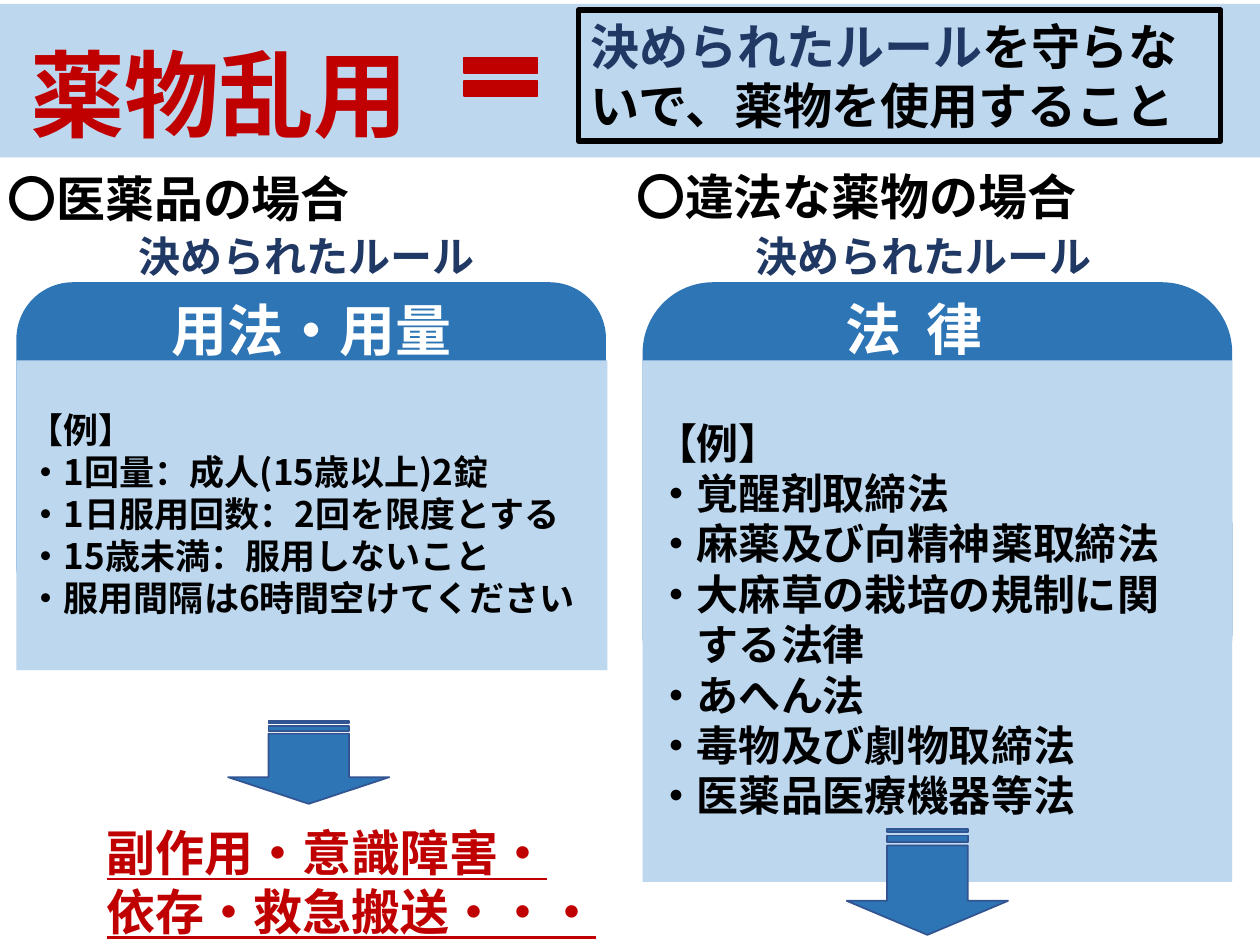
from lxml.etree import SubElement
from pptx import Presentation
from pptx.dml.color import RGBColor
from pptx.enum.shapes import MSO_SHAPE
from pptx.enum.text import MSO_ANCHOR, MSO_AUTO_SIZE, PP_ALIGN
from pptx.oxml.ns import qn
from pptx.util import Pt

PX = 9144  # 100 px to the inch
FONT = "Noto Sans CJK JP"
HEX = {"black": "000000", "white": "FFFFFF", "red": "C00000", "navy": "203864",
       "blue": "2E75B6", "pale": "BDD7EE", "edge": "325491"}

TITLE = "薬物乱用"
RULE = "決められたルール"
MEANING = [(RULE, "navy"), ("を守らないで、薬物を使用すること", "black")]
HARM = ["副作用・意識障害・", "依存・救急搬送・・・"]

# Boxes are left, top, width, height in px
COLUMNS = [
    {"case": "〇医薬品の場合", "case_at": (-4, 129, 392, 57),
     "rule_at": (100, 178, 290, 50),
     "head": "用法・用量", "head_at": (126, 230, 243, 64), "gap": 0,
     "cap_at": (13, 224, 468, 270), "card_at": (13, 286, 469, 246),
     "size": 20, "inset": 38, "arrow_at": (212, 541, 66, 128),
     "lines": ["【例】", "・1回量：成人(15歳以上)2錠", "・1日服用回数：2回を限度とする",
               "・15歳未満：服用しないこと", "・服用間隔は6時間空けてください"]},
    {"case": "〇違法な薬物の場合", "case_at": (495, 127, 392, 57),
     "rule_at": (590, 178, 290, 50),
     "head": "法 律", "head_at": (661, 229, 149, 64), "gap": 350,
     "cap_at": (510, 224, 468, 336), "card_at": (510, 286, 468, 414),
     "size": 24, "inset": 45, "arrow_at": (694, 636, 84, 128),
     "lines": ["【例】", "・覚醒剤取締法", "・麻薬及び向精神薬取締法",
               "・大麻草の栽培の規制に関", "　する法律", "・あへん法",
               "・毒物及び劇物取締法", "・医薬品医療機器等法"]},
]


def rgb(name):
    return RGBColor.from_string(HEX[name])


def px(box):
    return [n * PX for n in box]


def style(run, size, color):
    font = run.font
    font.size, font.bold, font.name = Pt(size), True, FONT
    font.color.rgb = rgb(color)
    SubElement(run._r.get_or_add_rPr(), qn("a:ea")).set("typeface", FONT)


def write(shape, lines, size, color):
    """Set one left-aligned paragraph per line and return the runs."""
    frame = shape.text_frame
    frame.word_wrap = True
    frame.vertical_anchor = MSO_ANCHOR.TOP
    frame.text = "\n".join(lines)
    runs = []
    for para in frame.paragraphs:
        para.alignment = PP_ALIGN.LEFT
        runs += para.runs
    for run in runs:
        style(run, size, color)
    return runs


def label(box, lines, size, color):
    return write(slide.shapes.add_textbox(*px(box)), lines, size, color)


def draw(kind, box, fill=None, line=None, width=1):
    shape = slide.shapes.add_shape(kind, *px(box))
    shape.shadow.inherit = False
    if fill:
        shape.fill.solid()
        shape.fill.fore_color.rgb = rgb(fill)
    else:
        shape.fill.background()
    if line:
        shape.line.color.rgb = rgb(line)
        shape.line.width = Pt(width)
    else:
        shape.line.fill.background()
    return shape


deck = Presentation()
deck.slide_width, deck.slide_height = px((1000, 750))
slide = deck.slides.add_slide(deck.slide_layouts[5])

# Title band
title = slide.shapes.title
title.left, title.top, title.width, title.height = px((0, 3, 1000, 122))
title.fill.solid()
title.fill.fore_color.rgb = rgb("pale")
write(title, [TITLE], 54, "red")
frame = title.text_frame
frame.auto_size = MSO_AUTO_SIZE.NONE
frame.vertical_anchor = MSO_ANCHOR.BOTTOM
frame.margin_left = 24 * PX
frame.paragraphs[0].line_spacing = 0.9

equal = draw(MSO_SHAPE.MATH_EQUAL, (358, 35, 79, 52), "red", "red")
equal.adjustments[0], equal.adjustments[1] = 0.235, 0.118

meaning = draw(MSO_SHAPE.RECTANGLE, (459, 8, 510, 104), line="black", width=3)
meaning.text_frame.word_wrap = True
para = meaning.text_frame.paragraphs[0]
para.alignment = PP_ALIGN.LEFT
for text, color in MEANING:
    run = para.add_run()
    run.text = text
    style(run, 28, color)

# Two columns
for col in COLUMNS:
    label(col["case_at"], [col["case"]], 28, "black")
    label(col["rule_at"], [RULE], 24, "navy")
    draw(MSO_SHAPE.ROUNDED_RECTANGLE, col["cap_at"], "blue")
    card = draw(MSO_SHAPE.RECTANGLE, col["card_at"], "pale")
    write(card, col["lines"], col["size"], "black")
    card.text_frame.margin_top = col["inset"] * PX
    for run in label(col["head_at"], [col["head"]], 32, "white"):
        run._r.get_or_add_rPr().set("spc", str(col["gap"]))
    arrow = draw(MSO_SHAPE.STRIPED_RIGHT_ARROW, col["arrow_at"], "blue", "edge")
    arrow.rotation = 90
    arrow.adjustments[0], arrow.adjustments[1] = 0.5, 0.321

for run in label((75, 648, 468, 104), HARM, 28, "red"):
    run.font.underline = True

deck.save("out.pptx")
